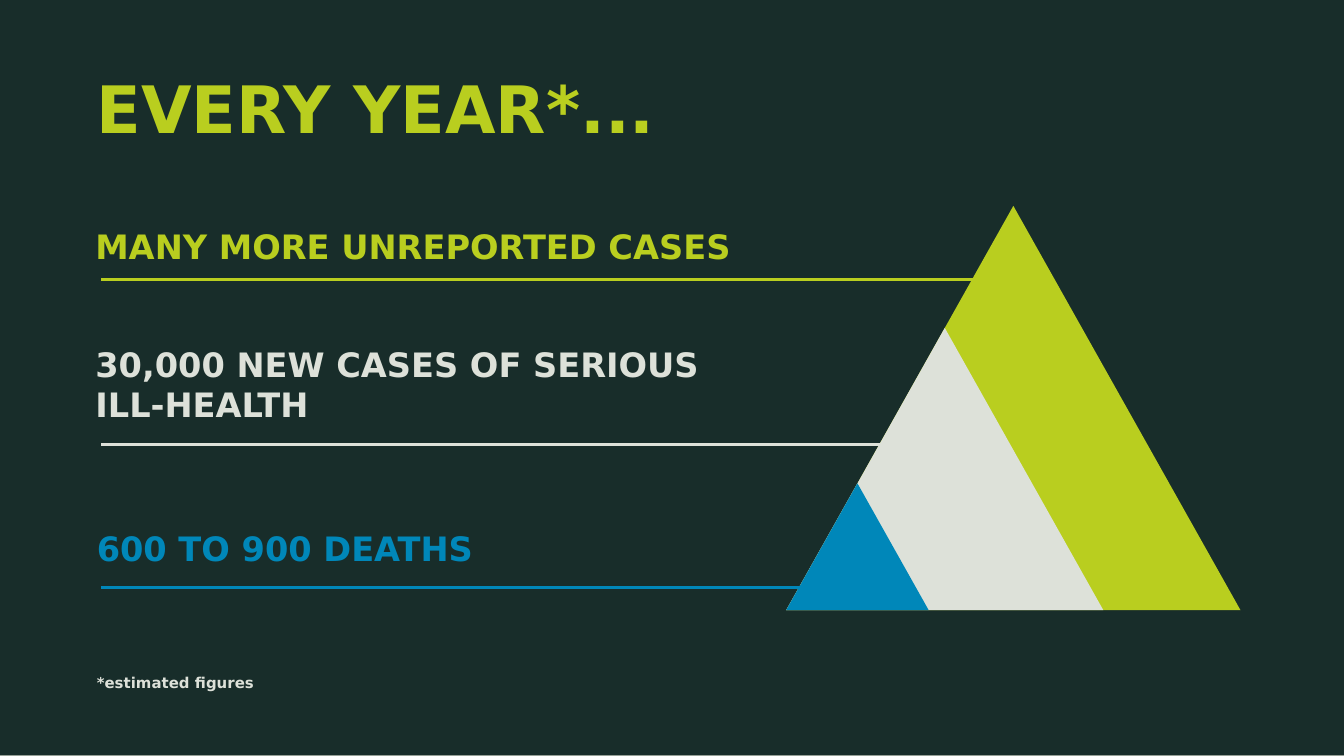
"""Build the slide on yearly case figures with its nested triangles."""
from dataclasses import dataclass

import pptx
import pptx.dml.color
import pptx.enum.shapes
import pptx.enum.text
import pptx.util
from lxml import etree
from pptx.util import Inches


@dataclass(frozen=True)
class Theme:
    font: str = "DejaVu Sans"
    backdrop: str = "DBE0D3"
    panel: str = "182D2A"
    lime: str = "B9CE1F"
    pale: str = "DDE1D9"
    blue: str = "0087B9"
    title_size: float = 35
    level_size: float = 18
    note_size: float = 8
    rule_width: float = 1.68


THEME = Theme()
WIDTH = 10
HEIGHT = WIDTH * 9 / 16
PANEL_HEIGHT = 5.62
RULE_LEFT = 0.75
TRIANGLE_LEFT, TRIANGLE_BASE, TRIANGLE_RATIO = 5.85, 4.54, 0.89

LEVELS = [
    dict(text="MANY MORE UNREPORTED CASES", color=THEME.lime,
         box=(0.71, 1.68, 4.74, 0.3), rule=(7.29, 2.08), base_width=3.38),
    dict(text="30,000 NEW CASES OF SERIOUS\nILL-HEALTH", color=THEME.pale,
         box=(0.71, 2.56, 5.29, 0.61), rule=(6.67, 3.31), base_width=2.36),
    dict(text="600 TO 900 DEATHS", color=THEME.blue,
         box=(0.72, 3.93, 4.45, 0.3), rule=(6.08, 4.37), base_width=1.06),
]


def rgb(color):
    return pptx.dml.color.RGBColor.from_string(color)


def add_filled_shape(slide, kind, box, color):
    shape = slide.shapes.add_shape(kind, *map(Inches, box))
    shape.shadow.inherit = False
    shape.fill.solid()
    shape.fill.fore_color.rgb = rgb(color)
    shape.line.fill.background()


def add_triangle(slide, base_width, color):
    height = base_width * TRIANGLE_RATIO
    box = (TRIANGLE_LEFT, TRIANGLE_BASE - height, base_width, height)
    kind = pptx.enum.shapes.MSO_SHAPE.ISOSCELES_TRIANGLE
    add_filled_shape(slide, kind, box, color)


def add_rule(slide, right, top, color):
    connector = slide.shapes.add_connector(
        pptx.enum.shapes.MSO_CONNECTOR.STRAIGHT,
        Inches(right), Inches(top), Inches(RULE_LEFT), Inches(top))
    connector.line.color.rgb = rgb(color)
    connector.line.width = pptx.util.Pt(THEME.rule_width)
    etree.SubElement(connector._element.spPr, pptx.oxml.ns.qn("a:effectLst"))


def add_text(slide, text, *, box, size, color, bold=True):
    frame = slide.shapes.add_textbox(*map(Inches, box)).text_frame
    frame.margin_left = frame.margin_right = 0
    frame.margin_top = frame.margin_bottom = 0
    frame.word_wrap = True
    frame.auto_size = pptx.enum.text.MSO_AUTO_SIZE.SHAPE_TO_FIT_TEXT
    paragraph = frame.paragraphs[0]
    paragraph.text = text
    for run in paragraph.runs:
        run.font.name = THEME.font
        run.font.size = pptx.util.Pt(size)
        run.font.bold = bold
        run.font.color.rgb = rgb(color)


def add_level(slide, text, color, box, rule, base_width):
    add_triangle(slide, base_width, color)
    add_rule(slide, *rule, color)
    add_text(slide, text, box=box, size=THEME.level_size, color=color)


def main():
    presentation = pptx.Presentation()
    presentation.slide_width = Inches(WIDTH)
    presentation.slide_height = Inches(HEIGHT)
    slide = presentation.slides.add_slide(presentation.slide_layouts[6])
    slide.background.fill.solid()
    slide.background.fill.fore_color.rgb = rgb(THEME.backdrop)
    add_filled_shape(slide, pptx.enum.shapes.MSO_SHAPE.RECTANGLE,
                     (0, 0, WIDTH, PANEL_HEIGHT), THEME.panel)
    add_text(slide, "EVERY YEAR*...", box=(0.72, 0.51, 9.03, 0.59),
             size=THEME.title_size, color=THEME.lime)
    for level in LEVELS:
        add_level(slide, **level)
    add_text(slide, "*estimated figures", box=(0.72, 5.01, 2.28, 0.14),
             size=THEME.note_size, color=THEME.pale)
    presentation.save("out.pptx")


if __name__ == "__main__":
    main()
